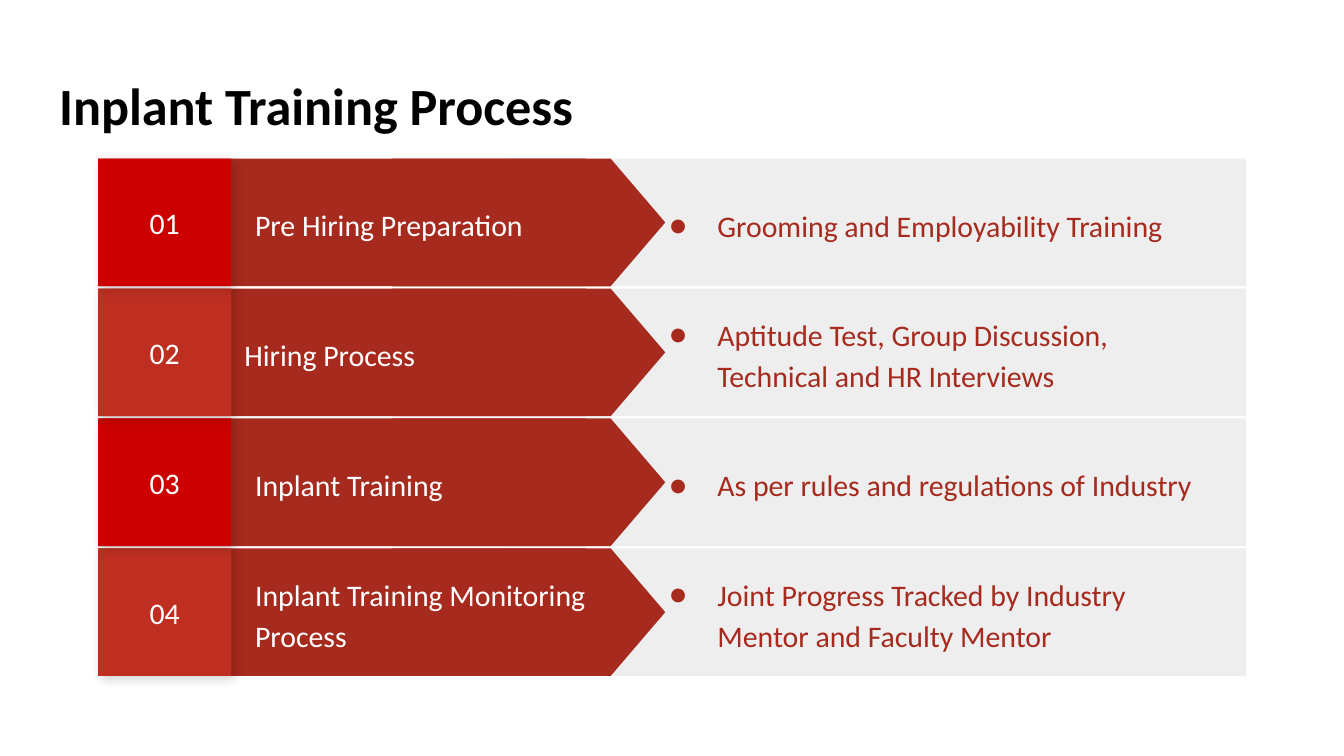
"""Build the Inplant Training Process slide."""
from lxml import etree
from pptx import Presentation
from pptx import util as u
from pptx.dml.color import RGBColor
from pptx.enum import shapes, text
from pptx.oxml import parse_xml
from pptx.oxml.ns import nsdecls, qn

BLACK = RGBColor(0x00, 0x00, 0x00)
WHITE = RGBColor(0xFF, 0xFF, 0xFF)
GREY = RGBColor(0xEE, 0xEE, 0xEE)
BRICK = RGBColor(0xA7, 0x2A, 0x1E)
DARK_BRICK = RGBColor(0xB0, 0x2C, 0x20)
LIGHT_BRICK = RGBColor(0xBE, 0x2F, 0x22)
RED = RGBColor(0xCC, 0x00, 0x00)

FONT = "Calibri"
ROW_TOP = 1.18
ROW_PITCH = 2.9 / 3
ROW_HEIGHT = 0.95
ARROW_LENGTH = 2.03
ARROW_LEFT = 2.92

STEPS = [
    ("01", RED, "Pre Hiring Preparation", 1.8,
     "Grooming and Employability Training"),
    ("02", LIGHT_BRICK, "Hiring Process", 1.72,
     "Aptitude Test, Group Discussion, Technical and HR Interviews"),
    ("03", RED, "Inplant Training", 1.8,
     "As per rules and regulations of Industry"),
    ("04", LIGHT_BRICK, "Inplant Training Monitoring Process", 1.8,
     "Joint Progress Tracked by Industry Mentor and Faculty Mentor"),
]


def write_text(shape, content, color, size=16, bold=False, spacing=None,
               align=text.PP_ALIGN.LEFT):
    """Fill a shape with one formatted paragraph and return the paragraph."""
    frame = shape.text_frame
    frame.word_wrap = True
    frame.auto_size = text.MSO_AUTO_SIZE.NONE
    frame.vertical_anchor = text.MSO_ANCHOR.MIDDLE
    frame.margin_left = frame.margin_right = u.Inches(0.1)
    frame.margin_top = frame.margin_bottom = u.Inches(0.1)
    paragraph = frame.paragraphs[0]
    paragraph.text = content
    paragraph.alignment = align
    paragraph.line_spacing = spacing
    font = paragraph.font
    font.name, font.size, font.bold = FONT, u.Pt(size), bold
    font.color.rgb = color
    return paragraph


def add_block(group, left, top, width, height, color,
              kind=shapes.MSO_SHAPE.RECTANGLE):
    """Add a flat filled shape without an outline."""
    shape = group.shapes.add_shape(kind, u.Inches(left), u.Inches(top),
                                   u.Inches(width), u.Inches(height))
    shape.shadow.inherit = False
    shape.fill.solid()
    shape.fill.fore_color.rgb = color
    shape.line.fill.background()
    return shape


def add_arrow(group, top):
    """Add the pointed end of a step, turned to face right."""
    arrow = add_block(group, ARROW_LEFT + (ARROW_LENGTH - ROW_HEIGHT) / 2,
                      top + (ROW_HEIGHT - ARROW_LENGTH) / 2,
                      ROW_HEIGHT, ARROW_LENGTH, BRICK,
                      shapes.MSO_SHAPE.FLOWCHART_OFFPAGE_CONNECTOR)
    arrow.rotation = 270


def add_shadow(shape):
    """Give a shape a soft black shadow to the lower right."""
    effects = shape._element.spPr.find(qn("a:effectLst"))
    effects.append(parse_xml(
        f'<a:outerShdw {nsdecls("a")} blurRad="{u.Pt(5.6)}" dist="{u.Pt(2.2)}" '
        'dir="2700000" algn="tl" rotWithShape="0"><a:srgbClr val="000000">'
        '<a:alpha val="17000"/></a:srgbClr></a:outerShdw>'))


def add_label(group, left, top, width, height, content, color):
    """Add a text box and return its paragraph."""
    box = group.shapes.add_textbox(u.Inches(left), u.Inches(top),
                                   u.Inches(width), u.Inches(height))
    return write_text(box, content, color, spacing=1.15)


def add_bullet(paragraph, color):
    """Turn a paragraph into a bulleted item with a hanging indent."""
    properties = paragraph._p.get_or_add_pPr()
    properties.set("marL", str(u.Inches(0.5)))
    properties.set("indent", str(u.Inches(-0.36)))
    bullet_color = etree.SubElement(properties, qn("a:buClr"))
    etree.SubElement(bullet_color, qn("a:srgbClr"), val=str(color))
    etree.SubElement(properties, qn("a:buFont"), typeface=FONT)
    etree.SubElement(properties, qn("a:buChar"), char="●")


def add_step(slide, top, number, color, name, name_left, detail):
    """Add one grouped row: number, step name and detail."""
    group = slide.shapes.add_group_shape()
    add_block(group, 3.79, top, 5.48, ROW_HEIGHT, GREY)
    add_block(group, 1.72, top, 2.64, ROW_HEIGHT, BRICK)
    add_arrow(group, top)
    add_label(group, name_left, top + 0.11, 2.78, 0.73, name, WHITE)
    add_shadow(add_block(group, 0.73, top, 0.99, ROW_HEIGHT, DARK_BRICK))
    tile = add_block(group, 0.73, top, 0.99, ROW_HEIGHT, color)
    write_text(tile, number, WHITE, align=text.PP_ALIGN.CENTER)
    add_bullet(add_label(group, 4.74, top, 4.26, ROW_HEIGHT, detail, BRICK), BRICK)


def add_title(slide, content):
    """Place and format the title placeholder."""
    title = slide.shapes.title
    title.left, title.top = u.Inches(0.34), u.Inches(0.49)
    title.width, title.height = u.Inches(9.32), u.Inches(0.63)
    write_text(title, content, BLACK, size=28, bold=True, spacing=0.9)


def main():
    """Create the presentation and save it."""
    presentation = Presentation()
    presentation.slide_width = u.Inches(10)
    presentation.slide_height = u.Inches(10 * 9 / 16)
    slide = presentation.slides.add_slide(presentation.slide_layouts[5])
    add_title(slide, "Inplant Training Process")
    for row, step in reversed(list(enumerate(STEPS))):
        add_step(slide, ROW_TOP + row * ROW_PITCH, *step)
    presentation.save("out.pptx")


if __name__ == "__main__":
    main()
